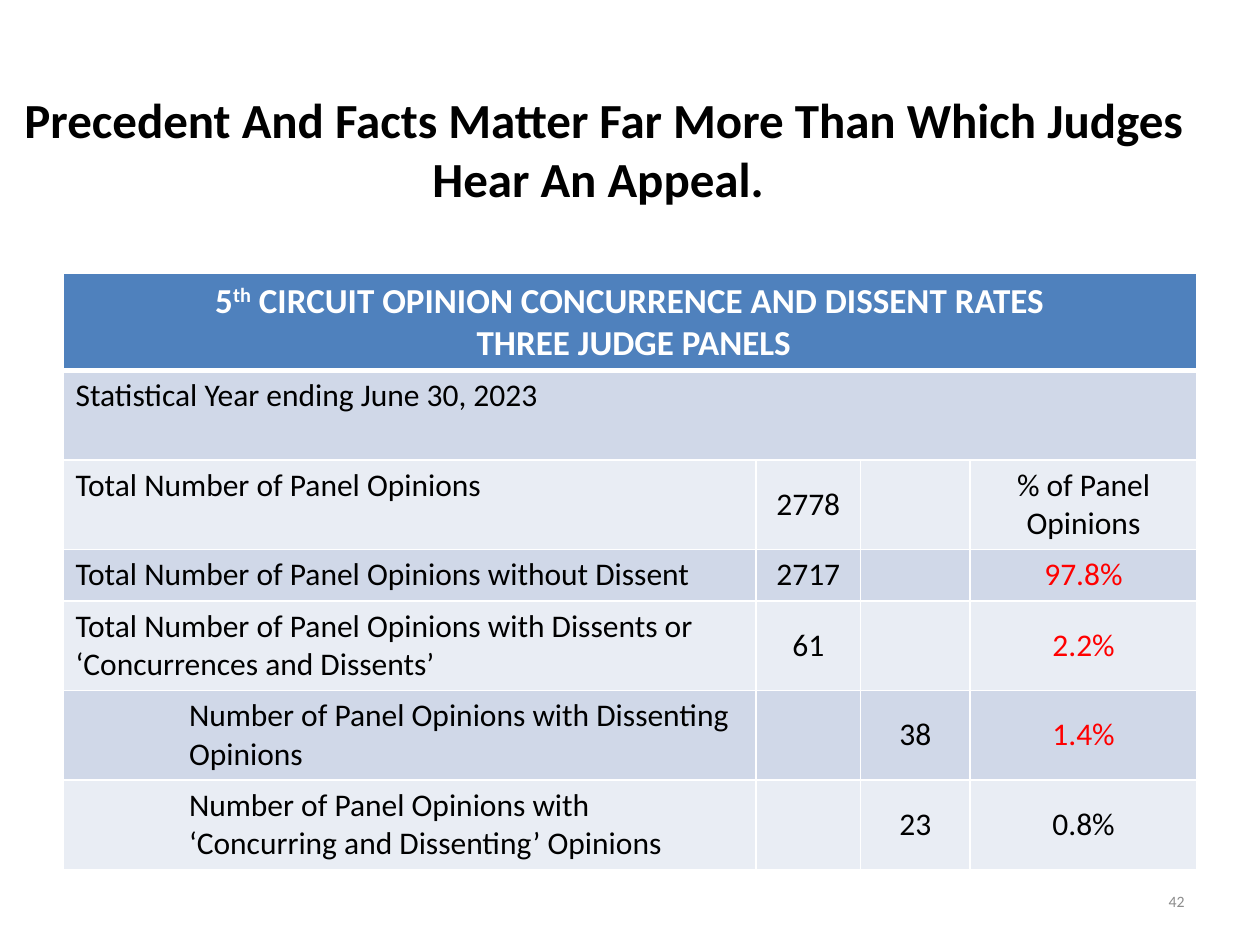
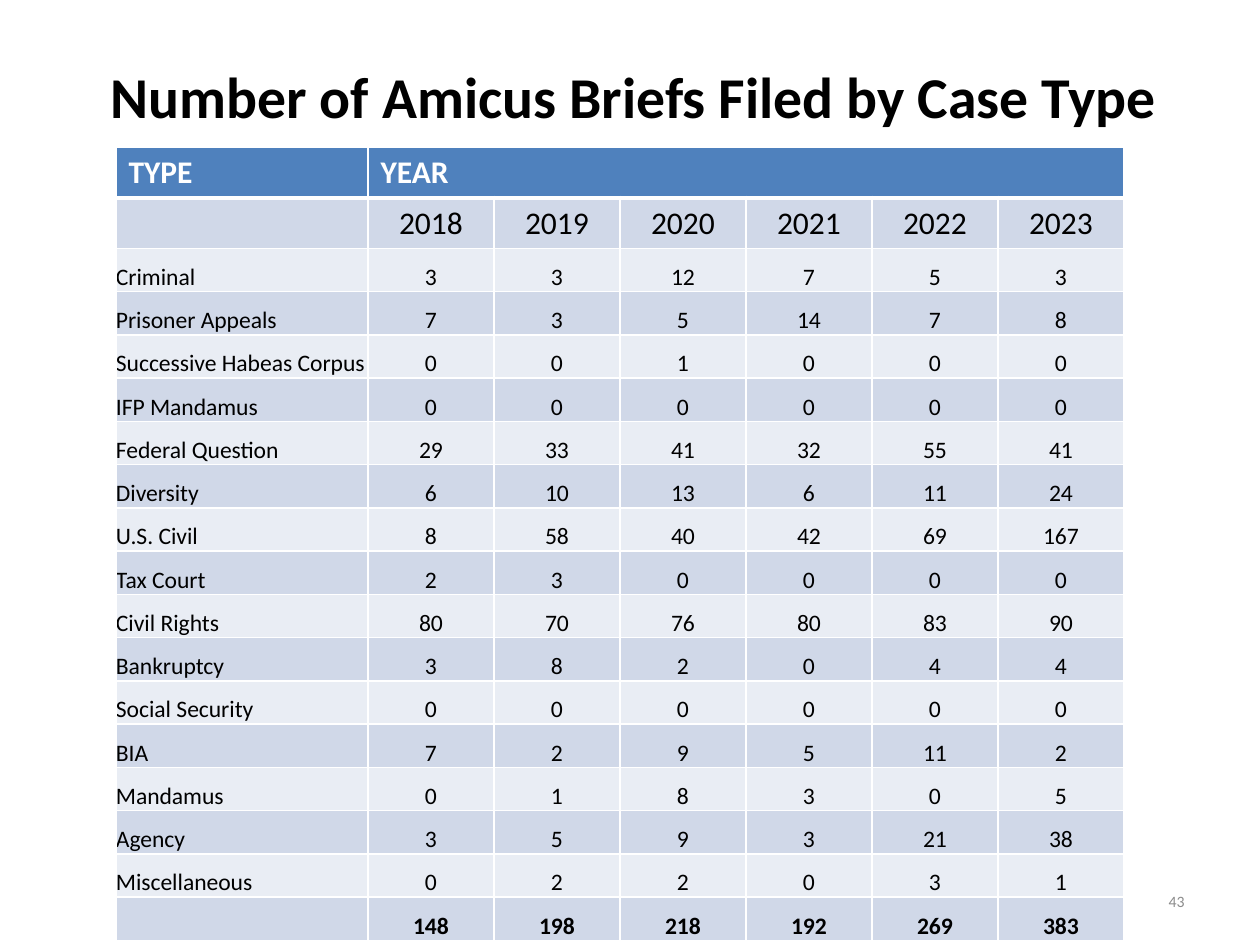
from lxml.etree import SubElement
from pptx import Presentation
from pptx.dml.color import RGBColor
from pptx.enum.text import MSO_ANCHOR, MSO_AUTO_SIZE, PP_ALIGN
from pptx.oxml.ns import qn
from pptx.util import Inches, Pt

FONT = "Calibri"
BLACK = RGBColor(0x00, 0x00, 0x00)
WHITE = RGBColor(0xFF, 0xFF, 0xFF)
RED = RGBColor(0xFF, 0x00, 0x00)
GREY = RGBColor(0x8C, 0x8C, 0x8C)
HEADER_BLUE = RGBColor(0x4F, 0x81, 0xBD)
BANDS = (RGBColor(0xE9, 0xED, 0xF4), RGBColor(0xD0, 0xD8, 0xE8))
LEFT, CENTER, RIGHT = PP_ALIGN.LEFT, PP_ALIGN.CENTER, PP_ALIGN.RIGHT
TOP, MIDDLE, BOTTOM = MSO_ANCHOR.TOP, MSO_ANCHOR.MIDDLE, MSO_ANCHOR.BOTTOM


def add_run(paragraph, text, size, color=BLACK, bold=False, align=LEFT):
    paragraph.alignment = align
    run = paragraph.add_run()
    run.text = text
    run.font.name = FONT
    run.font.size = Pt(size)
    run.font.bold = bold
    run.font.color.rgb = color
    return run


def add_banded_table(slide, left, top, widths, heights):
    """Add a table with white rules, a blue first row and two-tone bands below."""
    table = slide.shapes.add_table(
        len(heights), len(widths), Inches(left), Inches(top),
        Inches(sum(widths)), Inches(sum(heights))).table
    for column, width in zip(table.columns, widths):
        column.width = Inches(width)
    for r, height in enumerate(heights):
        table.rows[r].height = Inches(height)
        for cell in table.rows[r].cells:
            for side in ("lnL", "lnR", "lnT", "lnB"):
                thick = (r == 0 and side == "lnB") or (r == 1 and side == "lnT")
                line = SubElement(cell._tc.get_or_add_tcPr(), qn(f"a:{side}"),
                                  w=str(Pt(3 if thick else 1)))
                SubElement(SubElement(line, qn("a:solidFill")),
                           qn("a:srgbClr"), val=str(WHITE))
            cell.fill.solid()
            cell.fill.fore_color.rgb = BANDS[r % 2] if r else HEADER_BLUE
    return table


prs = Presentation()
prs.slide_width, prs.slide_height = Inches(10), Inches(7.5)

# Titles and page numbers
pages = [
    ("Precedent And Facts Matter Far More Than Which Judges Hear An Appeal. ",
     28, (0.04, 0.43, 9.5, 1.49), "42"),
    ("Number of Amicus Briefs Filed by Case Type",
     33, (0.53, 0.13, 9, 1.25), "43"),
]
slides = []
for heading, size, box, page_number in pages:
    slide = prs.slides.add_slide(prs.slide_layouts[5])
    title = slide.shapes.title
    title.left, title.top, title.width, title.height = map(Inches, box)
    title.text_frame.auto_size = MSO_AUTO_SIZE.NONE
    title.text_frame.vertical_anchor = MIDDLE
    add_run(title.text_frame.paragraphs[0], heading, size, bold=True, align=CENTER)

    footer = slide.shapes.add_textbox(
        Inches(7.17), Inches(6.95), Inches(2.33), Inches(0.4)).text_frame
    footer.word_wrap = True
    footer.vertical_anchor = MIDDLE
    add_run(footer.paragraphs[0], page_number, 9, GREY, align=RIGHT)
    slides.append(slide)
dissent_slide, amicus_slide = slides

# Dissent rates: label, panel total, subtotal, share, share colour
dissent_rows = [
    ("Statistical Year ending June 30, 2023", "", "", "", BLACK),
    ("Total Number of Panel Opinions", "2778", "", "% of Panel Opinions", BLACK),
    ("Total Number of Panel Opinions without Dissent", "2717", "", "97.8%", RED),
    ("Total Number of Panel Opinions with Dissents or ‘Concurrences and Dissents’",
     "61", "", "2.2%", RED),
    ("Number of Panel Opinions with Dissenting Opinions", "", "38", "1.4%", RED),
    ("Number of Panel Opinions with ‘Concurring and Dissenting’ Opinions",
     "", "23", "0.8%", BLACK),
]
rates = add_banded_table(dissent_slide, 0.5, 2.17, [5.5, 0.83, 0.87, 1.8],
                         [0.77, 0.71, 0.71, 0.41, 0.71, 0.71, 0.71])
for r in (0, 1):
    rates.cell(r, 0).merge(rates.cell(r, 3))

banner = rates.cell(0, 0)
banner.vertical_anchor = MIDDLE
first_line = banner.text_frame.paragraphs[0]
second_line = banner.text_frame.add_paragraph()
add_run(first_line, "5", 20, WHITE, True, CENTER)
ordinal = add_run(first_line, "th", 20, WHITE, True, CENTER)
ordinal.font._element.set("baseline", "30000")
add_run(first_line, " CIRCUIT OPINION CONCURRENCE AND DISSENT RATES",
        20, WHITE, True, CENTER)
add_run(second_line, " THREE JUDGE PANELS", 20, WHITE, True, CENTER)

for r, (*texts, share_color) in enumerate(dissent_rows, start=1):
    for c, text in enumerate(texts):
        if not text:
            continue
        cell = rates.cell(r, c)
        cell.vertical_anchor = MIDDLE if c or r == 6 else TOP
        if c == 0 and r >= 5:
            cell.margin_left = Inches(1)
        add_run(cell.text_frame.paragraphs[0], text, 18,
                share_color if c == 3 else BLACK, align=CENTER if c else LEFT)

# Amicus briefs per case type, 2018 to 2023
years = range(2018, 2024)
briefs = [
    ("Criminal", 3, 3, 12, 7, 5, 3),
    ("Prisoner Appeals", 7, 3, 5, 14, 7, 8),
    ("Successive Habeas Corpus", 0, 0, 1, 0, 0, 0),
    ("IFP Mandamus", 0, 0, 0, 0, 0, 0),
    ("Federal Question", 29, 33, 41, 32, 55, 41),
    ("Diversity", 6, 10, 13, 6, 11, 24),
    ("U.S. Civil", 8, 58, 40, 42, 69, 167),
    ("Tax Court", 2, 3, 0, 0, 0, 0),
    ("Civil Rights", 80, 70, 76, 80, 83, 90),
    ("Bankruptcy", 3, 8, 2, 0, 4, 4),
    ("Social Security", 0, 0, 0, 0, 0, 0),
    ("BIA", 7, 2, 9, 5, 11, 2),
    ("Mandamus", 0, 1, 8, 3, 0, 5),
    ("Agency", 3, 5, 9, 3, 21, 38),
    ("Miscellaneous", 0, 2, 2, 0, 3, 1),
    ("", 148, 198, 218, 192, 269, 383),
]
counts = add_banded_table(amicus_slide, 0.92, 1.17, [2] + [1] * len(years),
                          [0.4] * 2 + [0.3435] * len(briefs))
counts.cell(0, 1).merge(counts.cell(0, len(years)))
for c, text in enumerate(("TYPE", "YEAR")):
    add_run(counts.cell(0, c).text_frame.paragraphs[0], text, 18, WHITE, True)
for c, year in enumerate(years, start=1):
    add_run(counts.cell(1, c).text_frame.paragraphs[0], str(year), 18, align=CENTER)

for r, row in enumerate(briefs, start=2):
    is_total = row[0] == ""
    for c, value in enumerate(row):
        cell = counts.cell(r, c)
        cell.vertical_anchor = BOTTOM
        cell.margin_left = cell.margin_right = cell.margin_top = cell.margin_bottom = 0
        if value != "":
            add_run(cell.text_frame.paragraphs[0], str(value), 13.5,
                    bold=is_total, align=CENTER if c else LEFT)

prs.save("out.pptx")
